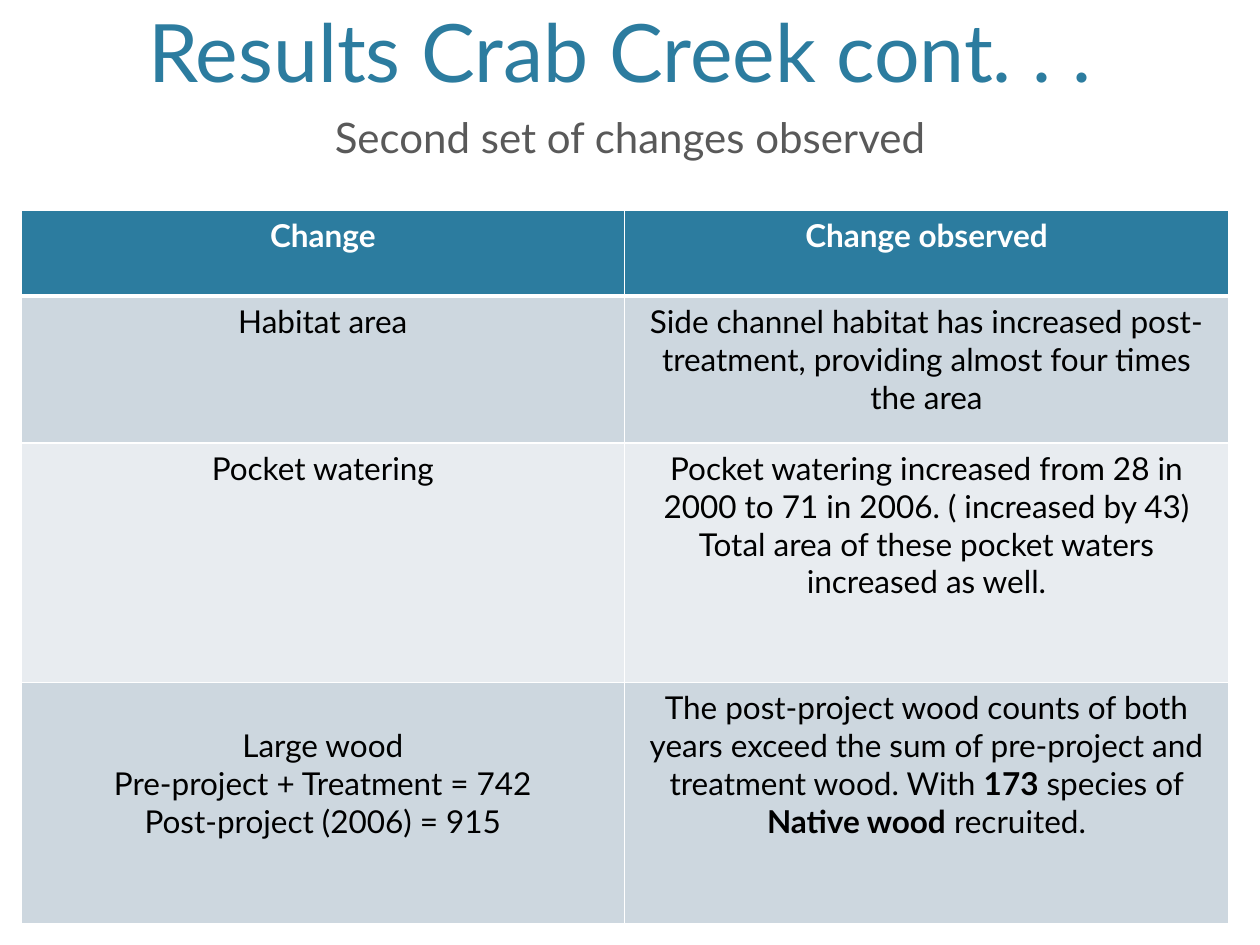
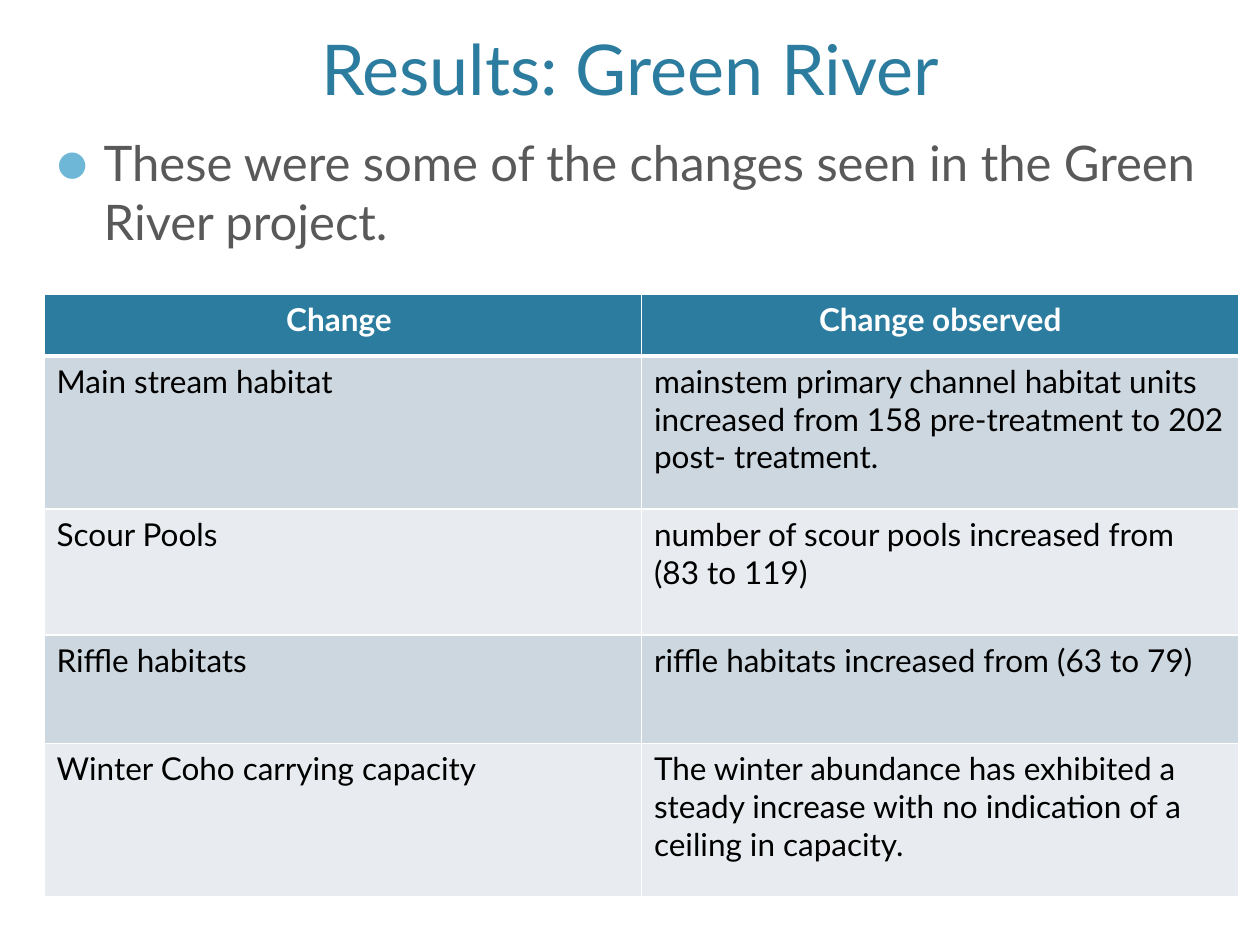
from dataclasses import dataclass
from typing import Any

import pptx
import pptx.dml.color
import pptx.enum.text
import pptx.oxml
import pptx.oxml.ns
import pptx.util
from lxml import etree

RGBColor = pptx.dml.color.RGBColor
Align = pptx.enum.text.PP_ALIGN
Anchor = pptx.enum.text.MSO_ANCHOR

TEAL = RGBColor(0x2C, 0x7C, 0x9F)
SKY = RGBColor(0x6F, 0xB7, 0xD7)
GREY = RGBColor(0x59, 0x59, 0x59)
BLACK = RGBColor(0, 0, 0)
WHITE = RGBColor(0xFF, 0xFF, 0xFF)
BANDS = (RGBColor(0xCD, 0xD7, 0xDF), RGBColor(0xE8, 0xEC, 0xF0))

FONT = "Lato"
SLIDE_WIDTH = pptx.util.Inches(10)
SLIDE_HEIGHT = pptx.util.Inches(7.5)
GRID_COLUMNS = 120
GRID_ROWS = 90
BULLET_INDENT = 4.5
TABLE_TEXT_SIZE = 18
THIN, THICK = 1, 3
HEADER_ROW = 0


@dataclass(frozen=True)
class Area:
    column: float
    row: float
    columns: float
    rows: float

    def box(self) -> tuple[int, int, int, int]:
        return across(self.column), down(self.row), across(self.columns), down(self.rows)


@dataclass(frozen=True)
class Caption:
    text: str
    area: Area
    size: float
    color: RGBColor = TEAL
    align: Align = Align.CENTER
    anchor: Anchor = Anchor.BOTTOM
    bulleted: bool = False


@dataclass(frozen=True)
class Entry:
    text: str
    lines_above: int = 0


@dataclass(frozen=True)
class ChangeTable:
    area: Area
    row_heights: tuple[float, ...]
    entries: tuple[tuple[Entry, Entry], ...]
    align: Align


@dataclass(frozen=True)
class ResultSlide:
    title: Caption
    intro: Caption
    changes: ChangeTable


def across(columns: float) -> int:
    return round(SLIDE_WIDTH * columns / GRID_COLUMNS)


def down(rows: float) -> int:
    return round(SLIDE_HEIGHT * rows / GRID_ROWS)


def apply(target: Any, values: dict[str, Any]) -> None:
    for name, value in values.items():
        setattr(target, name, value)


def write(paragraph: Any, text: str, size: float, color: RGBColor,
          align: Align, bold: bool = False) -> None:
    paragraph.alignment = align
    for position, part in enumerate(text.split("**")):
        if part:
            run = paragraph.add_run()
            run.text = part
            apply(run.font, {"name": FONT, "size": pptx.util.Pt(size),
                             "bold": bold or position % 2 == 1})
            run.font.color.rgb = color


def add_bullet(paragraph: Any) -> None:
    properties = paragraph._p.get_or_add_pPr()
    indent = across(BULLET_INDENT)
    properties.set("marL", str(indent))
    properties.set("indent", str(-indent))
    namespace = pptx.oxml.ns.nsdecls("a")
    for markup in (
        f'<a:buClr {namespace}><a:srgbClr val="{SKY}"/></a:buClr>',
        f'<a:buSzPct {namespace} val="110000"/>',
        f'<a:buFont {namespace} typeface="{FONT}"/>',
        f'<a:buChar {namespace} char="●"/>',
    ):
        properties.append(pptx.oxml.parse_xml(markup))


def add_caption(slide: Any, caption: Caption) -> None:
    frame = slide.shapes.add_textbox(*caption.area.box()).text_frame
    apply(frame, {"word_wrap": True, "vertical_anchor": caption.anchor})
    paragraph = frame.paragraphs[0]
    write(paragraph, caption.text, caption.size, caption.color, caption.align)
    if caption.bulleted:
        add_bullet(paragraph)


def set_borders(cell: Any, top: float, bottom: float) -> None:
    properties = cell._tc.get_or_add_tcPr()
    qn = pptx.oxml.ns.qn
    widths = {"lnL": THIN, "lnR": THIN, "lnT": top, "lnB": bottom}
    for position, (side, width) in enumerate(widths.items()):
        line = etree.Element(qn(f"a:{side}"), w=str(pptx.util.Pt(width)))
        fill = etree.SubElement(line, qn("a:solidFill"))
        etree.SubElement(fill, qn("a:srgbClr"), val=str(WHITE))
        properties.insert(position, line)


def fill_cell(cell: Any, entry: Entry, row: int, align: Align) -> None:
    header = row == HEADER_ROW
    cell.fill.solid()
    cell.fill.fore_color.rgb = TEAL if header else BANDS[(row - 1) % len(BANDS)]
    set_borders(cell, THICK if row == HEADER_ROW + 1 else THIN, THICK if header else THIN)
    cell.margin_top += pptx.util.Pt(entry.lines_above * TABLE_TEXT_SIZE * 1.2)
    frame = cell.text_frame
    for position, line in enumerate(entry.text.split("\n")):
        paragraph = frame.add_paragraph() if position else frame.paragraphs[0]
        write(paragraph, line, TABLE_TEXT_SIZE, WHITE if header else BLACK,
              Align.CENTER if header else align, header)


def add_changes(slide: Any, changes: ChangeTable) -> None:
    column_count = len(changes.entries[0])
    table = slide.shapes.add_table(
        len(changes.entries), column_count, *changes.area.box()).table
    apply(table, {"first_row": True, "horz_banding": False})
    for column in table.columns:
        column.width = across(changes.area.columns / column_count)
    for row, (height, entries) in enumerate(zip(changes.row_heights, changes.entries)):
        table.rows[row].height = down(height)
        for column, entry in enumerate(entries):
            fill_cell(table.cell(row, column), entry, row, changes.align)


CRAB_CREEK = ResultSlide(
    Caption("Results Crab Creek cont. . . ", Area(7.2, 1, 105.6, 9), 46),
    Caption("Second set of changes observed", Area(3, 10, 114, 9), 24, GREY,
            anchor=Anchor.TOP),
    ChangeTable(
        Area(2, 20, 115, 68),
        (8.2, 14, 22.8, 23),
        (
            (Entry("Change"), Entry("Change observed")),
            (Entry("Habitat area"),
             Entry("Side channel habitat has increased post-treatment, "
                   "providing almost four times the area")),
            (Entry("Pocket watering"),
             Entry("Pocket watering increased from 28 in 2000 to 71 in 2006. "
                   "( increased by 43) Total area of these pocket waters "
                   "increased as well.")),
            (Entry("Large wood\nPre-project + Treatment = 742\n"
                   "Post-project (2006) = 915", lines_above=1),
             Entry("The post-project wood counts of both years exceed the sum "
                   "of pre-project and treatment wood. With **173** species of "
                   "**Native wood** recruited.")),
        ),
        Align.CENTER,
    ),
)

GREEN_RIVER = ResultSlide(
    Caption("Results: Green River", Area(7.2, 2, 105.6, 9), 40),
    Caption("These were some of the changes seen in the Green River project.",
            Area(4.2, 12, 113.8, 16), 28, GREY, Align.LEFT, Anchor.TOP, True),
    ChangeTable(
        Area(4.2, 28, 113.8, 57.4),
        (5.9, 14.6, 12, 10.3, 14.6),
        (
            (Entry("Change "), Entry("Change observed")),
            (Entry("Main stream habitat"),
             Entry("mainstem primary channel habitat units increased from 158 "
                   "pre-treatment to 202 post- treatment.")),
            (Entry("Scour Pools"),
             Entry("number of scour pools increased from (83 to 119)")),
            (Entry("Riffle habitats"),
             Entry("riffle habitats increased from (63 to 79)")),
            (Entry("Winter Coho carrying capacity"),
             Entry("The winter abundance has exhibited a steady increase with "
                   "no indication of a ceiling in capacity.")),
        ),
        Align.LEFT,
    ),
)


def main() -> None:
    deck = pptx.Presentation()
    apply(deck, {"slide_width": SLIDE_WIDTH, "slide_height": SLIDE_HEIGHT})
    for result in (CRAB_CREEK, GREEN_RIVER):
        slide = deck.slides.add_slide(deck.slide_layouts[6])
        add_caption(slide, result.title)
        add_caption(slide, result.intro)
        add_changes(slide, result.changes)
    deck.save("out.pptx")


if __name__ == "__main__":
    main()
